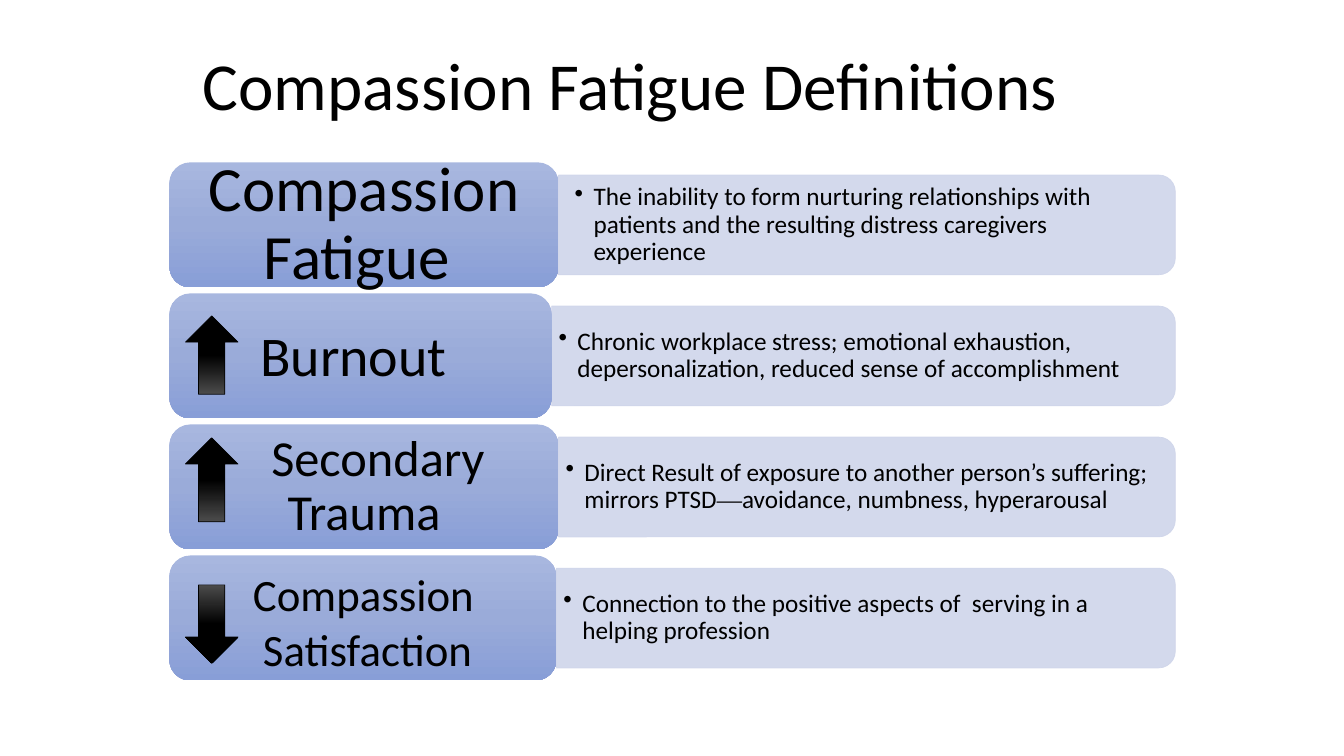
"""Build the slide that defines compassion fatigue and its three components."""
from copy import deepcopy

from lxml import etree
from pptx import Presentation
from pptx.dml import color
from pptx.enum import shapes, text
from pptx.oxml import ns
from pptx.util import Pt

TITLE = "Compassion Fatigue Definitions "
BODY, SERIF = "Calibri", "Times New Roman"
BLACK, PANEL = "000000", "CFD5EA"
LABEL_STOPS = [(0, "A8B7DF"), (0.5, "9AABD9"), (1, "889ED7")]
UP_STOPS = [(0, BLACK), (0.5, BLACK), (1, "4B4B4B")]
DOWN_STOPS = [(0, "4B4B4B"), (0.5, BLACK), (1, BLACK)]
UP = (shapes.MSO_SHAPE.UP_ARROW, UP_STOPS)
DOWN = (shapes.MSO_SHAPE.DOWN_ARROW, DOWN_STOPS)

ROWS = [
    {"label": [(0, [("Compassion Fatigue ", 45, BODY)])],
     "width": 278, "inset": 13.5, "spacing": 0.9, "panel_inset": 11.5, "arrow": None,
     "definition": [("The inability to form nurturing relationships with patients "
                     "and the resulting distress caregivers experience", 18, BODY)]},
    {"label": [(0, [("Burnout", 40, BODY), (" ", 45, BODY)])],
     "width": 273, "inset": 12, "spacing": 0.9, "panel_inset": 5, "arrow": (UP, 16, 56),
     "definition": [("Chronic workplace stress; emotional exhaustion, depersonalization, "
                     "reduced sense of accomplishment", 18, BODY)]},
    {"label": [(20, [("Secondary Trauma", 36, BODY)])],
     "width": 278, "inset": 13.5, "spacing": 0.9, "panel_inset": 5, "arrow": (UP, 9.5, 60),
     "definition": [("Direct Result of exposure to another person’s suffering; mirrors PTSD", 18, BODY),
                    ("—", 18, SERIF),
                    ("avoidance, numbness, hyperarousal", 18, BODY)]},
    {"label": [(0, [(" ", 36, BODY), ("Compassion ", 32, BODY)]),
               (14, [("Satisfaction ", 32, BODY)])],
     "width": 276.5, "inset": 10.8, "spacing": 1, "panel_inset": 5, "arrow": (DOWN, 21, 56),
     "definition": [("Connection to the positive aspects of  serving in a helping profession", 18, BODY)]},
]

LEFT, RIGHT, TOP, PITCH = 121, 839.5, 116, 93.6
LABEL_HEIGHT, PANEL_HEIGHT, TEXT_HEIGHT = 89.3, 71.3, 64
ARROW_LEFT, ARROW_WIDTH = 132.5, 37.5
BULLET_INDENT = 13.5


def rgb(value):
    return color.RGBColor.from_string(value)


def apply(target, values):
    for name, value in values.items():
        setattr(target, name, value)


def frame_format(frame, side, edge, anchor):
    apply(frame, {"word_wrap": True, "auto_size": text.MSO_AUTO_SIZE.NONE,
                  "vertical_anchor": anchor,
                  "margin_left": Pt(side), "margin_right": Pt(side),
                  "margin_top": Pt(edge), "margin_bottom": Pt(edge)})


def write(para, spans, spacing, align):
    apply(para, {"alignment": align, "line_spacing": spacing})
    for words, size, font in spans:
        span = para.add_run()
        span.text = words
        apply(span.font, {"size": Pt(size), "name": font})
        span.font.color.rgb = rgb(BLACK)


def add_shape(page, kind, left, top, width, height):
    shape = page.shapes.add_shape(kind, Pt(left), Pt(top), Pt(width), Pt(height))
    shape.shadow.inherit = False
    return shape


def paint_gradient(shape, stops):
    shape.fill.gradient()
    shape.fill.gradient_angle = 270
    stop_list = shape._element.spPr.find(".//" + ns.qn("a:gsLst"))
    stop_list.append(deepcopy(stop_list[0]))
    for stop, (position, value) in zip(shape.fill.gradient_stops, stops):
        stop.position = position
        stop.color.rgb = rgb(value)


def add_panel(page, left, middle, row):
    width = RIGHT - left
    panel = add_shape(page, shapes.MSO_SHAPE.ROUND_2_SAME_RECTANGLE,
                      left + (width - PANEL_HEIGHT) / 2, middle - width / 2,
                      PANEL_HEIGHT, width)
    panel.rotation = 90
    panel.fill.solid()
    panel.fill.fore_color.rgb = rgb(PANEL)
    panel.line.color.rgb = rgb(PANEL)
    panel.line.width = Pt(0.5)
    for tint in panel._element.spPr.iter(ns.qn("a:srgbClr")):
        etree.SubElement(tint, ns.qn("a:alpha"), val="90000")

    box = page.shapes.add_textbox(Pt(left), Pt(middle - TEXT_HEIGHT / 2),
                                  Pt(width - 3.5), Pt(TEXT_HEIGHT))
    inset = row["panel_inset"]
    frame_format(box.text_frame, inset, inset / 2, text.MSO_ANCHOR.MIDDLE)
    para = box.text_frame.paragraphs[0]
    write(para, row["definition"], 0.9, text.PP_ALIGN.LEFT)
    props = para._p.get_or_add_pPr()
    props.set("marL", str(Pt(BULLET_INDENT)))
    props.set("indent", str(-Pt(BULLET_INDENT)))
    etree.SubElement(props, ns.qn("a:buChar"), char="•")


def add_label(page, top, row):
    label = add_shape(page, shapes.MSO_SHAPE.ROUNDED_RECTANGLE,
                      LEFT, top, row["width"], LABEL_HEIGHT)
    paint_gradient(label, LABEL_STOPS)
    label.line.fill.background()
    frame = label.text_frame
    frame_format(frame, row["inset"], row["inset"] / 2, text.MSO_ANCHOR.MIDDLE)
    for index, (indent, spans) in enumerate(row["label"]):
        para = frame.add_paragraph() if index else frame.paragraphs[0]
        write(para, spans, row["spacing"], text.PP_ALIGN.CENTER)
        para._p.get_or_add_pPr().set("indent", str(Pt(indent)))


def add_arrow(page, top, direction, offset, height):
    kind, stops = direction
    arrow = add_shape(page, kind, ARROW_LEFT, top + offset, ARROW_WIDTH, height)
    paint_gradient(arrow, stops)
    arrow.line.color.rgb = rgb(BLACK)
    arrow.line.width = Pt(0.5)


def main():
    deck = Presentation()
    apply(deck, {"slide_width": Pt(960), "slide_height": Pt(540)})
    page = deck.slides.add_slide(deck.slide_layouts[5])

    title = page.shapes.title
    apply(title, {"left": Pt(16), "top": Pt(34), "width": Pt(879), "height": Pt(51)})
    frame_format(title.text_frame, 7.2, 3.6, text.MSO_ANCHOR.TOP)
    write(title.text_frame.paragraphs[0], [(TITLE, 48, BODY)], 0.9, text.PP_ALIGN.CENTER)

    for index, row in enumerate(ROWS):
        top = TOP + index * PITCH
        add_panel(page, LEFT + row["width"], top + LABEL_HEIGHT / 2, row)
        add_label(page, top, row)
        if row["arrow"]:
            add_arrow(page, top, *row["arrow"])

    deck.save("out.pptx")


if __name__ == "__main__":
    main()
